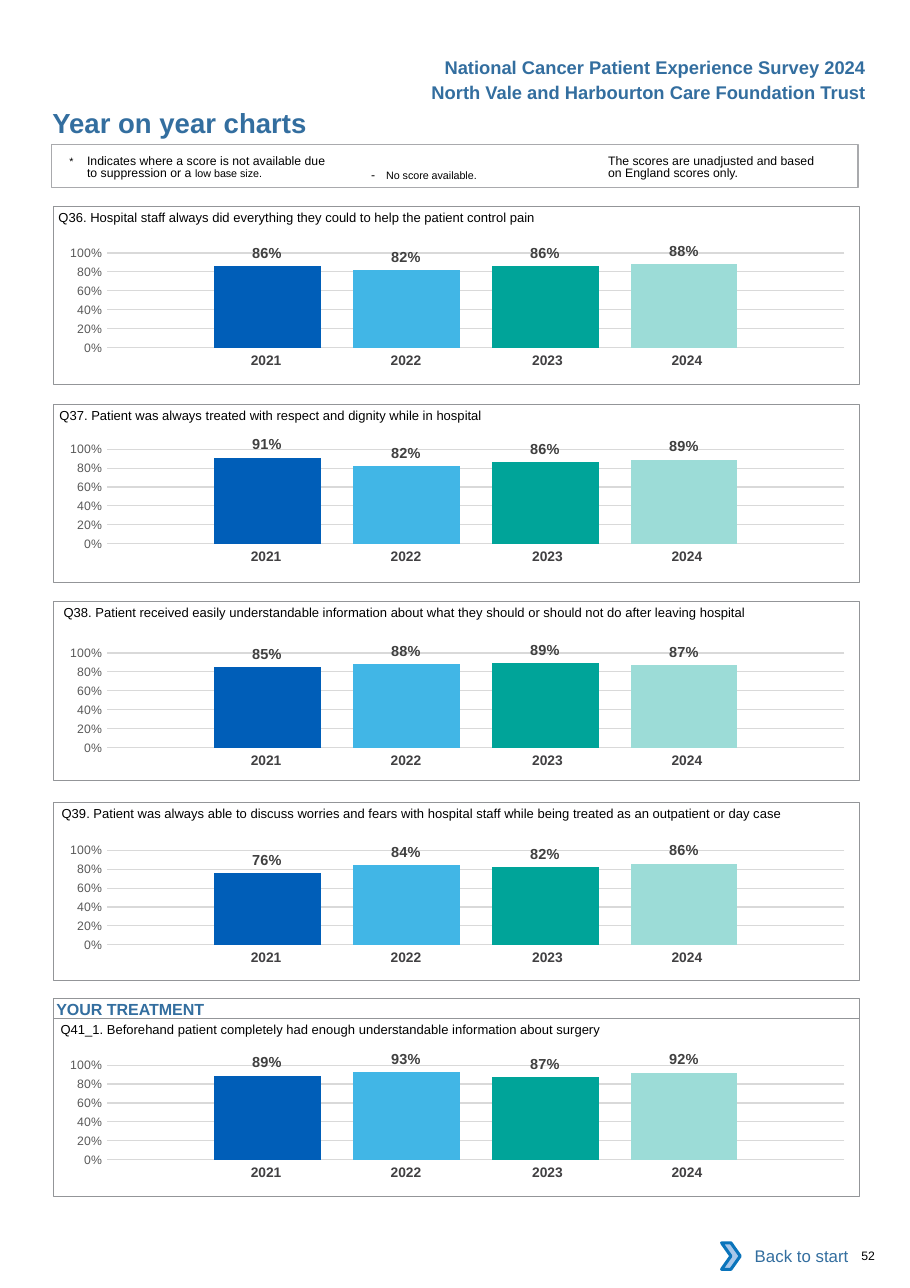
from dataclasses import dataclass

from lxml.etree import SubElement
from pptx import Presentation
from pptx.chart.data import CategoryChartData
from pptx.dml.color import RGBColor
from pptx.enum.chart import XL_CHART_TYPE as ChartType, XL_LABEL_POSITION as LabelPos
from pptx.enum.chart import XL_TICK_MARK as Tick
from pptx.enum.shapes import MSO_SHAPE as Shape
from pptx.enum.text import MSO_ANCHOR as Anchor, PP_ALIGN as Align
from pptx.oxml.ns import qn
from pptx.util import Pt


def text_style(size, color, bold=False):
    return {"name": "Arial", "size": Pt(size), "bold": bold, "color": color}


@dataclass(frozen=True)
class Theme:
    border = "939598"
    legend_border = "A9AAAD"
    grid = "D9D9D9"
    arrow_fill = "A8C7E9"
    arrow_line = "0A74BB"
    bars = ("005EB8", "41B6E6", "00A499", "9CDCD7")
    title = text_style(18, "336E9F", True)
    header = text_style(12, "336E9F", True)
    section = text_style(10.5, "336E9F", True)
    back = text_style(11, "336E9F")
    question = text_style(8.5, "000000")
    note = text_style(8, "000000")
    small_note = text_style(7, "000000")
    axis = text_style(8, "595959")
    year = text_style(9, "414042", True)
    score = text_style(9.5, "404040", True)


theme = Theme()


def set_font(font, style):
    for key, value in style.items():
        if key == "color":
            font.color.rgb = RGBColor.from_string(value)
        else:
            setattr(font, key, value)


def write(frame, runs, inset=(0, 0, 0, 0), anchor=Anchor.TOP, align=Align.LEFT,
          leading=None, hang=0):
    left, top, right, bottom = (Pt(v) for v in inset)
    layout = {"word_wrap": True, "vertical_anchor": anchor, "margin_left": left,
              "margin_top": top, "margin_right": right, "margin_bottom": bottom}
    for key, value in layout.items():
        setattr(frame, key, value)
    line = frame.paragraphs[0]
    line.alignment = align
    if leading:
        line.line_spacing = Pt(leading)
    if hang:
        properties = line._p.get_or_add_pPr()
        properties.set("marL", str(Pt(hang)))
        properties.set("indent", str(-Pt(hang)))
    for words, style in runs:
        run = line.add_run()
        run.text = words
        set_font(run.font, style)


survey = Presentation()
survey.slide_width, survey.slide_height = Pt(594.72), Pt(841.68)
page = survey.slides.add_slide(survey.slide_layouts[5])
shapes = page.shapes

# Page title
title = shapes.title
title.left, title.top, title.width, title.height = Pt(34.2), Pt(69.5), Pt(324), Pt(22)
write(title.text_frame, [("Year on year charts", theme.title)])

# Survey and trust, footer texts, legend notes
note, small = theme.note, theme.small_note
middle_right = {"anchor": Anchor.MIDDLE, "align": Align.RIGHT}
texts = [
    ((259, 33, 307, 22), [("National Cancer Patient Experience Survey 2024", theme.header)],
     middle_right),
    ((259, 49, 307, 22), [("North Vale and Harbourton Care Foundation Trust", theme.header)],
     middle_right),
    ((476.6, 805.7, 78, 30.2), [("Back to start", theme.back)], middle_right),
    ((563, 815.8, 30, 9.4), [("52", note)], {}),
    ((45.4, 99.4, 173, 22),
     [("*\t", small),
      ("Indicates where a score is not available due to suppression or a ", note),
      ("low base size.", small)],
     {"inset": (0, 2.2, 0, 0), "leading": 8.1, "hang": 11.5}),
    ((242.6, 109.6, 125, 10), [("-\t", note), ("No score available.", small)],
     {"hang": 9.8}),
    ((397.4, 99.4, 140, 22),
     [("The scores are unadjusted and based on England scores only.", note)],
     {"inset": (0, 2.2, 0, 0), "leading": 8.1}),
]
for place, runs, layout in texts:
    write(shapes.add_textbox(*map(Pt, place)).text_frame, runs, **layout)

# Question panels: question, left, panel top, chart top, yearly scores
years = ("2021", "2022", "2023", "2024")
questions = [
    ("Q36. Hospital staff always did everything they could to help the patient control pain",
     38.2, 134.6, 151.9, (0.86, 0.82, 0.86, 0.88)),
    ("Q37. Patient was always treated with respect and dignity while in hospital",
     38.9, 264.2, 280.1, (0.91, 0.82, 0.86, 0.89)),
    ("Q38. Patient received easily understandable information about what they should "
     "or should not do after leaving hospital",
     41.6, 393.1, 413.3, (0.85, 0.88, 0.89, 0.87)),
    ("Q39. Patient was always able to discuss worries and fears with hospital staff "
     "while being treated as an outpatient or day case",
     40.3, 524.2, 542.2, (0.76, 0.84, 0.82, 0.86)),
    ("Q41_1. Beforehand patient completely had enough understandable information about surgery",
     39.6, 665.3, 682.6, (0.89, 0.93, 0.87, 0.92)),
]
plot_area = {"xMode": "edge", "yMode": "edge", "x": 0.079, "y": 0.145, "w": 0.915, "h": 0.666}

for question, left, panel_top, chart_top, scores in questions:
    # Bars
    data = CategoryChartData(number_format="0%")
    data.categories = ["1"]
    for number, score in enumerate(scores, 1):
        data.add_series(f"Series {number}", [score])
    chart = shapes.add_chart(ChartType.COLUMN_CLUSTERED, Pt(28.1), Pt(chart_top),
                             Pt(527), Pt(92.9), data).chart
    chart.has_legend = chart.has_title = False
    chart.font.name, chart.font.size = "Calibri", Pt(10)
    chart.category_axis.visible = False
    plot = chart.plots[0]
    for key, value in {"gap_width": 200, "overlap": -30, "vary_by_categories": False}.items():
        setattr(plot, key, value)
    for series, color in zip(plot.series, theme.bars):
        series.format.fill.solid()
        series.format.fill.fore_color.rgb = RGBColor.from_string(color)
        labels = series.data_labels
        label_format = {"show_value": True, "position": LabelPos.OUTSIDE_END,
                        "number_format": "0%", "number_format_is_linked": False}
        for key, value in label_format.items():
            setattr(labels, key, value)
        set_font(labels.font, theme.score)

    # Percentage axis
    axis = chart.value_axis
    axis_format = {"minimum_scale": 0, "maximum_scale": 1, "major_unit": 0.2,
                   "major_tick_mark": Tick.NONE, "minor_tick_mark": Tick.NONE}
    for key, value in axis_format.items():
        setattr(axis, key, value)
    axis.format.line.fill.background()
    axis.tick_labels.number_format = "0%"
    axis.tick_labels.number_format_is_linked = False
    set_font(axis.tick_labels.font, theme.axis)
    gridline = axis.major_gridlines.format.line
    gridline.width = Pt(0.75)
    gridline.color.rgb = RGBColor.from_string(theme.grid)

    # Fixed plot area inside the chart
    area = chart._chartSpace.chart.plotArea
    for old in area.findall(qn("c:layout")):
        area.remove(old)
    outer = SubElement(area, qn("c:layout"))
    area.insert(0, outer)
    manual = SubElement(outer, qn("c:manualLayout"))
    SubElement(manual, qn("c:layoutTarget")).set("val", "inner")
    for key, value in plot_area.items():
        SubElement(manual, qn(f"c:{key}")).set("val", str(value))

    # Years under the bars
    year_row = shapes.add_table(1, 4, Pt(124.6), Pt(chart_top + 75), Pt(370.7), Pt(19.4)).table
    year_row.first_row = year_row.horz_banding = False
    year_row._tbl.tblPr.find(qn("a:tableStyleId")).text = "{2D5ABB26-0587-4C30-8999-92F81FD0307C}"
    year_row.rows[0].height = Pt(19.4)
    for column, (year, width, right) in enumerate(
            zip(years, (91.4, 91.4, 96.5, 91.4), (0, 0, 2.9, 8.6))):
        year_row.columns[column].width = Pt(width)
        cell = year_row.cell(0, column)
        cell.fill.background()
        margins = {"margin_left": Pt(7.2), "margin_right": Pt(right),
                   "margin_top": Pt(3.6), "margin_bottom": Pt(3.6)}
        for key, value in margins.items():
            setattr(cell, key, value)
        line = cell.text_frame.paragraphs[0]
        line.text, line.alignment = year, Align.CENTER
        set_font(line.runs[0].font, theme.year)

    # Question
    heading = shapes.add_textbox(Pt(left), Pt(panel_top + 2), Pt(515), Pt(11))
    write(heading.text_frame, [(question, theme.question)])

# Frames: legend, section bar, question panels
frames = [(33.8, 94.3, 28.1, theme.legend_border, 0.75, ""),
          (34.6, 652.3, 13, theme.border, 0.5, "YOUR TREATMENT")]
frames += [(34.6, panel_top, 116.6, theme.border, 0.5, "")
           for _, _, panel_top, _, _ in questions]
for left, top, height, color, weight, section in frames:
    frame = shapes.add_shape(Shape.RECTANGLE, Pt(left), Pt(top), Pt(527), Pt(height))
    frame.shadow.inherit = False
    frame.fill.background()
    frame.line.color.rgb = RGBColor.from_string(color)
    frame.line.width = Pt(weight)
    if section:
        write(frame.text_frame, [(section, theme.section)], inset=(2.2, 0.7, 0, 0))

# Arrow beside the way back
arrow = shapes.add_shape(Shape.CHEVRON, Pt(471.6), Pt(812.2), Pt(12.2), Pt(17.3))
arrow.shadow.inherit = False
arrow.fill.solid()
arrow.fill.fore_color.rgb = RGBColor.from_string(theme.arrow_fill)
arrow.line.color.rgb = RGBColor.from_string(theme.arrow_line)
arrow.line.width = Pt(2)

survey.save("out.pptx")
